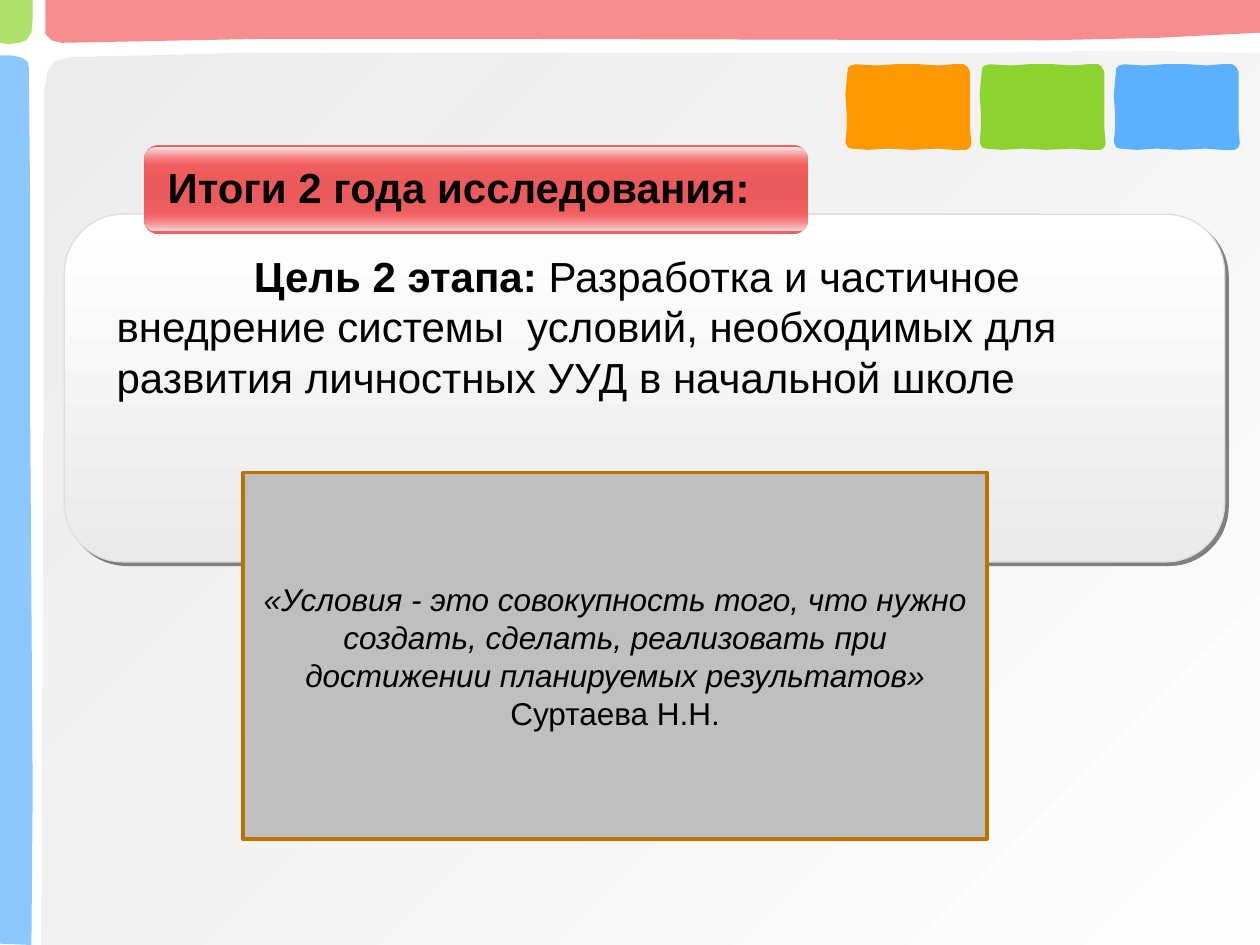
from lxml import etree
from pptx import Presentation
from pptx import util as u
from pptx.dml.color import RGBColor
from pptx.enum import shapes, text
from pptx.oxml.ns import qn

# Grid: 1000 columns by 750 rows on a 10 x 7.5 inch slide
CELL = u.Inches(0.01)
COLS, ROWS = 1000, 750

WHITE = RGBColor(0xFF, 0xFF, 0xFF)
BLACK = RGBColor(0, 0, 0)
MIST = RGBColor(0xE6, 0xE6, 0xE6)
PALE = RGBColor(0xEA, 0xEA, 0xEA)
EDGE = RGBColor(0xDD, 0xDD, 0xDD)
SHADE = RGBColor(0x80, 0x80, 0x80)
GRAY = RGBColor(0xBF, 0xBF, 0xBF)
BROWN = RGBColor(0xBD, 0x71, 0x00)
RED = RGBColor(0xF4, 0x5E, 0x5E)
DEEP = RGBColor(0xEB, 0x5B, 0x5B)
PINK = RGBColor(0xFC, 0xE4, 0xE4)
ROSE = RGBColor(0xFD, 0xEB, 0xEB)
BLUE = RGBColor(0x5C, 0xB1, 0xFE)
GREEN = RGBColor(0x8C, 0xD3, 0x2D)
ORANGE = RGBColor(0xFF, 0x99, 0x00)

# Outlines as corner points in grid cells
FIELD = [(1000, 750), (1000, 42), (880, 40), (760, 42), (433, 42),
         (180, 42), (57, 45), (44, 48), (38, 56), (35, 73), (35, 182),
         (34, 506), (33, 750)]
TOP = [(1000, 0), (1000, 26), (920, 30), (832, 32), (426, 31), (203, 31),
       (49, 34), (41, 32), (36, 27), (36, 0)]
SIDE = [(0, 749), (25, 750), (26, 628), (24, 330), (24, 167), (23, 54),
        (22, 49), (18, 46), (9, 44), (0, 44)]
CORNER = [(0, 0), (26, 0), (26, 14), (25, 26), (21, 32), (15, 34),
          (7, 35), (0, 34)]
TILE = [(2, 4), (4, 2), (8, 1), (24, 2), (39, 1), (59, 1), (74, 2), (85, 1),
        (94, 1), (97, 3), (99, 7), (99, 21), (99, 41), (99, 52), (100, 64),
        (99, 67), (96, 69), (86, 69), (73, 68), (53, 69), (34, 68),
        (18, 69), (5, 68), (2, 67), (0, 63), (1, 52), (1, 40), (0, 25),
        (1, 14)]


def tint(node, share):
    etree.SubElement(node, qn("a:alpha"), val=str(share * 1000))


def blend(shape, angle, *stops):
    """Gradient from (position, colour, opacity) stops, clockwise angle."""
    shape.fill.gradient()
    shape.fill.gradient_angle = 360 - angle
    rows = next(shape.element.iter(qn("a:gsLst")))
    rows[:] = []
    for pos, color, share in stops:
        stop = etree.SubElement(rows, qn("a:gs"), pos=str(pos * 1000))
        node = etree.SubElement(stop, qn("a:srgbClr"), val=str(color))
        if share < 100:
            tint(node, share)


def paint(shape, color, share=100):
    shape.fill.solid()
    shape.fill.fore_color.rgb = color
    if share < 100:
        tint(next(shape.element.spPr.iter(qn("a:srgbClr"))), share)


def trace(page, outline, left=0, top=0):
    """Closed outline with its corner at left, top."""
    first, *rest = [((left + x) * CELL, (top + y) * CELL) for x, y in outline]
    pen = page.shapes.build_freeform(*first)
    pen.add_line_segments(rest, close=True)
    shape = pen.convert_to_shape()
    shape.line.fill.background()
    shape.shadow.inherit = False
    return shape


def block(page, kind, box, bend=None):
    shape = page.shapes.add_shape(kind, *(int(CELL * n) for n in box))
    shape.shadow.inherit = False
    shape.line.fill.background()
    if bend is not None:
        shape.adjustments[0] = bend
    return shape


def write(shape, parts, size, align):
    """One paragraph of (wording, bold, italic) parts."""
    frame = shape.text_frame
    frame.word_wrap = True
    para = frame.paragraphs[0]
    para.alignment = align
    para.space_before = u.Pt(0)
    for words, bold, slant in parts:
        run = para.add_run()
        run.text = words
        run.font.name, run.font.size = "Arial", u.Pt(size)
        run.font.bold, run.font.italic = bold, slant
        run.font.color.rgb = BLACK


def seat(holder, box):
    """Move a placeholder to its box, in front of what is drawn so far."""
    holder.left, holder.top, holder.width, holder.height = (
        int(CELL * n) for n in box)
    holder.element.getparent().append(holder.element)
    holder.text_frame.vertical_anchor = text.MSO_ANCHOR.TOP
    holder.text_frame.auto_size = text.MSO_AUTO_SIZE.NONE


def frame(page):
    blend(trace(page, FIELD), 45, (0, MIST, 70), (100, WHITE, 100))
    for outline, color in ((TOP, RED), (SIDE, BLUE), (CORNER, GREEN)):
        paint(trace(page, outline), color, 70)


def tiles(page, left, top, pitch):
    for k, color in enumerate((ORANGE, GREEN, BLUE)):
        paint(trace(page, TILE, left + k * pitch, top), color)


def goal(page, holder, box):
    x, y, w, h = box
    panel = block(page, shapes.MSO_SHAPE.ROUNDED_RECTANGLE, box, 0.17)
    blend(panel, 90, (0, WHITE, 100), (100, PALE, 100))
    panel.line.color.rgb, panel.line.width = EDGE, u.Pt(0.75)
    cast = etree.SubElement(
        panel.element.spPr.find(qn("a:effectLst")), qn("a:outerShdw"),
        dist=str(u.Pt(2.8)), dir="2700000", algn="ctr", rotWithShape="0")
    etree.SubElement(cast, qn("a:srgbClr"), val=str(SHADE))
    # Goal wording with an indented first line
    seat(holder, (x + 31.5, y + 23.7, w - 47, h - 64))
    props = holder.text_frame.paragraphs[0]._p.get_or_add_pPr()
    props.set("marL", "0")
    props.set("indent", str(CELL * 109))
    etree.SubElement(props, qn("a:buNone"))
    write(holder, [("Цель 2 этапа:", True, False),
                   (" Разработка и частичное внедрение системы  условий, "
                    "необходимых для развития личностных УУД в начальной "
                    "школе", False, False)], 24, text.PP_ALIGN.LEFT)


def banner(page, holder, box):
    x, y, w, h = box
    kind = shapes.MSO_SHAPE.ROUNDED_RECTANGLE
    blend(block(page, kind, box, 0.17), 90,
          (0, RED, 100), (50, DEEP, 100), (100, RED, 100))
    # Glossy strips along the lower and upper edges
    for drop, stops in ((h - 20, ((0, RED, 0), (100, PINK, 100))),
                        (2, ((0, ROSE, 100), (100, RED, 0)))):
        blend(block(page, kind, (x + 1, y + drop, w - 2, 17), 0.5), 90, *stops)
    seat(holder, (x, y + 8, w, 50))
    holder.text_frame.margin_left = CELL * 19
    write(holder, [("Итоги 2 года исследования:", True, False)],
          24, text.PP_ALIGN.LEFT)


def quote(page, box):
    card = block(page, shapes.MSO_SHAPE.RECTANGLE, box)
    paint(card, GRAY)
    card.line.color.rgb, card.line.width = BROWN, u.Pt(2)
    card.text_frame.vertical_anchor = text.MSO_ANCHOR.MIDDLE
    write(card, [("«Условия - это совокупность того, что нужно создать, "
                  "сделать, реализовать при достижении планируемых "
                  "результатов» ", False, True),
                 ("Суртаева Н.Н.", False, False)], 18, text.PP_ALIGN.CENTER)


def main():
    deck = Presentation()
    deck.slide_width, deck.slide_height = COLS * CELL, ROWS * CELL
    page = deck.slides.add_slide(deck.slide_layouts[1])
    title, body = page.placeholders
    frame(page)
    tiles(page, 671, 50, 106.5)
    goal(page, body, (51, 170, 921, 276))
    banner(page, title, (114, 115, 527.5, 71))
    quote(page, (193, 375, 590.5, 291))
    deck.save("out.pptx")


if __name__ == "__main__":
    main()
